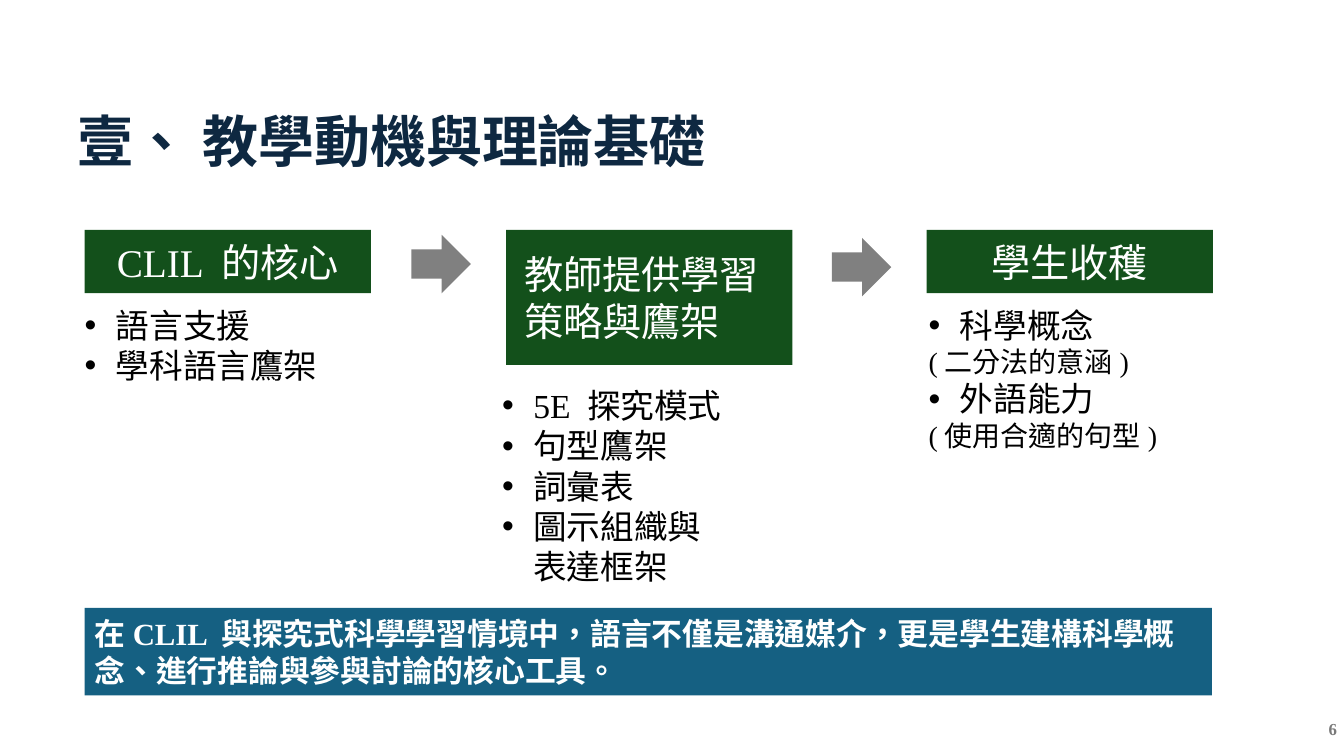
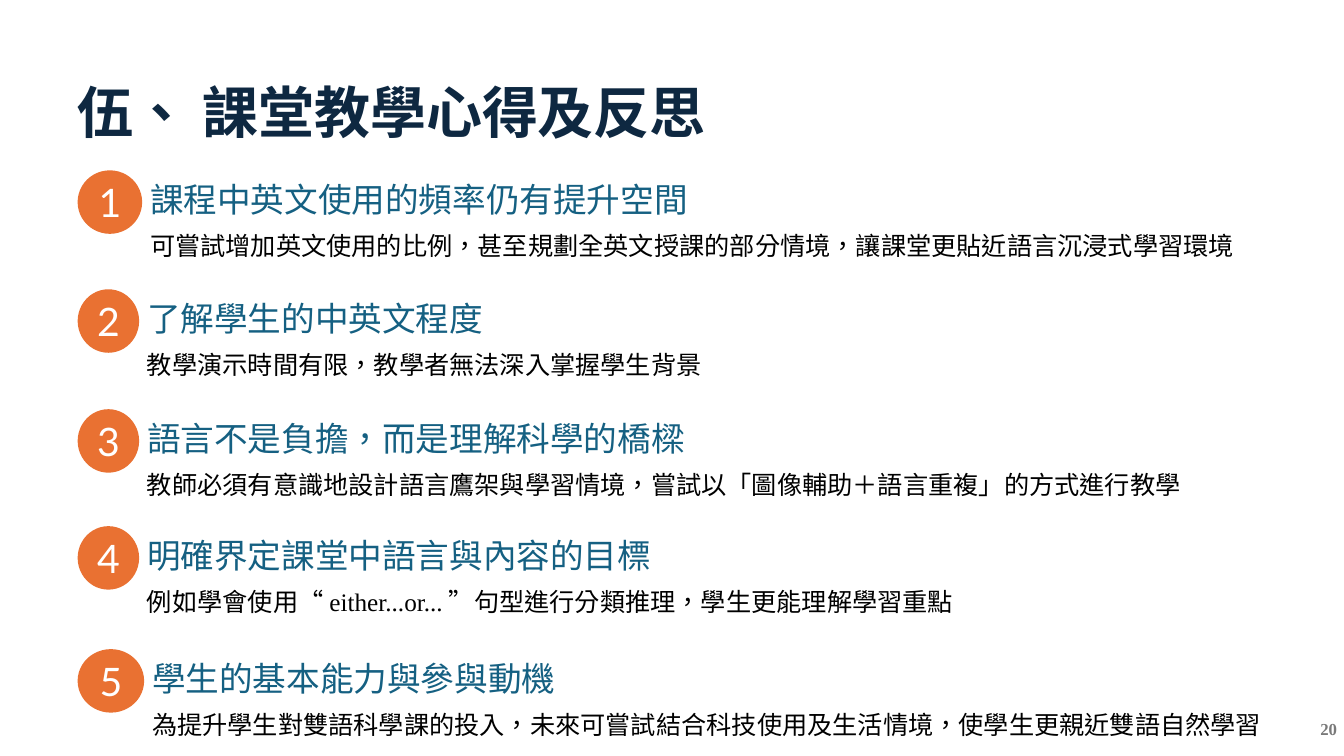
from pptx import Presentation
from pptx.dml.color import RGBColor
from pptx.enum.shapes import MSO_SHAPE
from pptx.enum.text import MSO_ANCHOR, MSO_AUTO_SIZE, PP_ALIGN
from pptx.oxml.ns import qn
from pptx.util import Pt
from lxml.etree import SubElement

PX = 9144  # 100 px to the inch
SERIF, SANS = "Times New Roman", "Lato"
NAVY, BLUE, GREEN, ORANGE = "0E2841", "156082", "13501B", "E97132"
GREY, DIM, WHITE, BLACK = "808080", "797979", "FFFFFF", "000000"
LEFT, MID, RIGHT = PP_ALIGN.LEFT, PP_ALIGN.CENTER, PP_ALIGN.RIGHT
TOP, MIDDLE = MSO_ANCHOR.TOP, MSO_ANCHOR.MIDDLE
INDENT = 31

COLUMNS = [
    # left, heading height, heading, alignment, list box, list items
    (84, 63, "CLIL 的核心", MID, (74, 297, 266, 91),
     ["語言支援", "學科語言鷹架"]),
    (502, 134, "教師提供學習\n策略與鷹架", LEFT, (488, 377, 241, 212),
     ["5E 探究模式", "句型鷹架", "詞彙表", "圖示組織與表達框架"]),
    (919, 63, "學生收穫", MID, (911, 297, 299, 158),
     ["科學概念", "(二分法的意涵)", "外語能力", "(使用合適的句型)"]),
]
ARROWS = [(408, 233), (825, 236)]
POINTS = [
    # top, circle width, heading, detail
    (169, 64, "課程中英文使用的頻率仍有提升空間",
     "可嘗試增加英文使用的比例，甚至規劃全英文授課的部分情境，讓課堂更貼近語言沉浸式學習環境"),
    (287, 61, "了解學生的中英文程度",
     "教學演示時間有限，教學者無法深入掌握學生背景"),
    (406, 61, "語言不是負擔，而是理解科學的橋樑",
     "教師必須有意識地設計語言鷹架與學習情境，嘗試以「圖像輔助＋語言重複」的方式進行教學"),
    (522, 61, "明確界定課堂中語言與內容的目標",
     "例如學會使用“either...or...”句型進行分類推理，學生更能理解學習重點"),
    (644, 66, "學生的基本能力與參與動機",
     "為提升學生對雙語科學課的投入，未來可嘗試結合科技使用及生活情境，使學生更親近雙語自然學習"),
]


def rgb(code):
    return RGBColor.from_string(code)


def emu(box):
    return [n * PX for n in box]


def place(shape, box):
    shape.left, shape.top, shape.width, shape.height = emu(box)


def style(para, size, color, bold=False, font=SERIF, align=LEFT):
    para.alignment = align
    para.line_spacing = 1.0
    para.space_before = para.space_after = Pt(0)
    for run in para.runs:
        run._r.get_or_add_rPr().set("lang", "zh-TW")
        run.font.name, run.font.size = font, Pt(size)
        run.font.bold = bold
        run.font.color.rgb = rgb(color)


def write(shape, text, size, color, anchor=MIDDLE, **look):
    frame = shape.text_frame
    frame.text = text
    frame.word_wrap = True
    frame.auto_size = MSO_AUTO_SIZE.NONE
    frame.vertical_anchor = anchor
    for para in frame.paragraphs:
        style(para, size, color, **look)


def label(slide, box, text, size, color, **look):
    write(slide.shapes.add_textbox(*emu(box)), text, size, color, **look)


def solid(slide, kind, box, fill):
    shape = slide.shapes.add_shape(kind, *emu(box))
    shape.shadow.inherit = False
    shape.fill.solid()
    shape.fill.fore_color.rgb = rgb(fill)
    shape.line.fill.background()
    return shape


def mark(para, bullet):
    """Give the paragraph a hanging bullet, or none at all."""
    props = para._p.get_or_add_pPr()
    hang = INDENT * PX if bullet else 0
    props.set("marL", str(hang))
    props.set("indent", str(-hang))
    if bullet:
        SubElement(props, qn("a:buFont")).set("typeface", "Arial")
        SubElement(props, qn("a:buChar")).set("char", "•")
    else:
        SubElement(props, qn("a:buNone"))


def fill_list(holder, box, items):
    place(holder, box)
    write(holder, "\n".join(items), 24, BLACK, anchor=TOP)
    for para in holder.text_frame.paragraphs:
        note = para.text.startswith("(")
        mark(para, not note)
        if note:
            style(para, 20, BLACK)


def add_page(deck, layout, title, top, number):
    slide = deck.slides.add_slide(deck.slide_layouts.get_by_name(layout))
    place(slide.shapes.title, (67, top, 1200, 117))
    write(slide.shapes.title, title, 40, NAVY, bold=True)
    label(slide, (1225, 703, 111, 40), number, 12, DIM, bold=True, align=RIGHT)
    return slide


def add_theory(deck):
    slide = add_page(deck, "Comparison", "壹、 教學動機與理論基礎", 81, "6")
    *holders, spare = list(slide.placeholders)[1:]
    spare.element.getparent().remove(spare.element)
    for holder, (left, high, head, align, box, items) in zip(holders, COLUMNS):
        band = solid(slide, MSO_SHAPE.RECTANGLE, (left, 228, 284, high), GREEN)
        write(band, head, 28, WHITE, align=align)
        if align == LEFT:
            band.text_frame.margin_left = 18 * PX
        fill_list(holder, box, items)
    for left, top in ARROWS:
        solid(slide, MSO_SHAPE.RIGHT_ARROW, (left, top, 59, 58), GREY)
    band = solid(slide, MSO_SHAPE.RECTANGLE, (84, 603, 1118, 87), BLUE)
    write(band, "在CLIL 與探究式科學學習情境中，語言不僅是溝通媒介，"
          "更是學生建構科學概念、進行推論與參與討論的核心工具。", 22, WHITE, bold=True)


def add_review(deck):
    slide = add_page(deck, "Title Only", "伍、 課堂教學心得及反思", 52, "20")
    for number, (top, wide, head, detail) in enumerate(POINTS, 1):
        disc = solid(slide, MSO_SHAPE.OVAL, (77, top, wide, 63), ORANGE)
        write(disc, str(number), 28, WHITE, font=SANS, align=MID)
        left = 75 + wide
        label(slide, (left, top + 4, wide * 11, 50), head, 24, BLUE, anchor=TOP)
        label(slide, (left, top + 55, wide * 35 // 2, 40), detail, 18, BLACK,
              anchor=TOP)


def main():
    deck = Presentation()
    deck.slide_width, deck.slide_height = emu((1333, 750))
    add_theory(deck)
    add_review(deck)
    deck.save("out.pptx")


if __name__ == "__main__":
    main()
